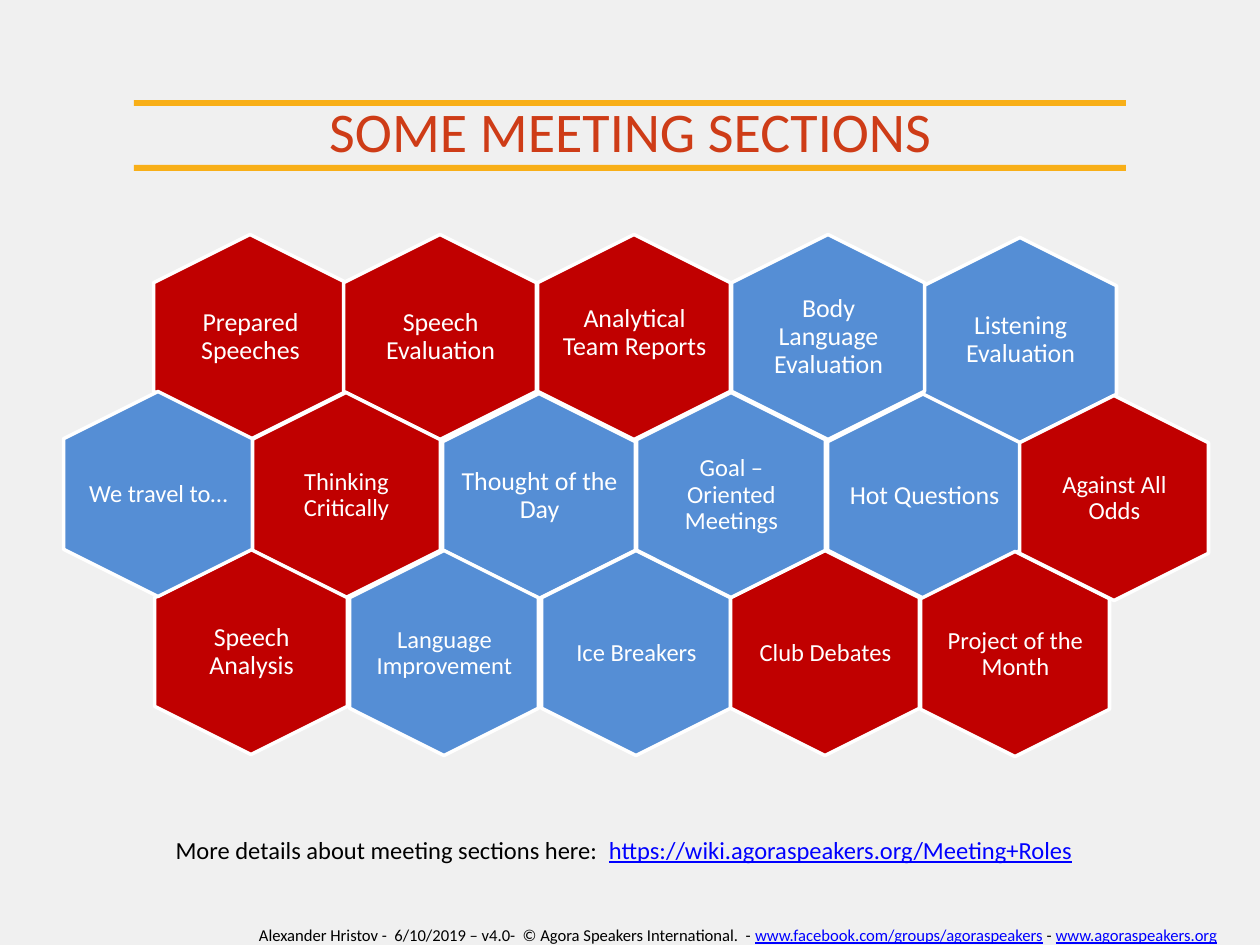
from dataclasses import dataclass

from pptx import Presentation
from pptx.dml.color import RGBColor
from pptx.enum.shapes import MSO_SHAPE
from pptx.enum.text import MSO_ANCHOR, PP_ALIGN
from pptx.util import Pt

RECTANGLE = MSO_SHAPE.RECTANGLE
HEXAGON = MSO_SHAPE.HEXAGON
TOP = MSO_ANCHOR.TOP
MIDDLE = MSO_ANCHOR.MIDDLE
CENTER = PP_ALIGN.CENTER

EMU_PER_PX = 914400 / 126
SLIDE_WIDTH, SLIDE_HEIGHT = 1260, 945
FONT_NAME = "Calibri"
COLORS = {
    "background": "F0F0F0",
    "bar": "F8AF18",
    "title": "CE3C17",
    "red": "C00000",
    "blue": "558ED5",
    "white": "FFFFFF",
    "black": "000000",
    "link": "0000FF",
}
HEXAGON_LENGTH = 205
LABEL_HEIGHT = 141


@dataclass(frozen=True)
class Run:
    text: str
    color: str = "black"
    underline: bool = False


@dataclass(frozen=True)
class TextBlock:
    left: int
    top: int
    width: int
    height: int
    size: float
    runs: tuple[Run, ...]
    anchor: MSO_ANCHOR = TOP
    inset: tuple[int, int] = (13, 6)
    line_spacing: float = 1.0


@dataclass(frozen=True)
class HexagonSize:
    across: int
    label_width: int
    font_size: float


@dataclass(frozen=True)
class Section:
    label: str
    center_x: int
    center_y: int
    color: str
    size: HexagonSize
    label_shift: int = 0


LARGE = HexagonSize(193, 169, 14.8)
SMALL = HexagonSize(189, 165, 14)

BAR_TOPS = (100, 165)

# Sections from back to front
SECTIONS = (
    Section("Prepared Speeches", 250, 337, "red", LARGE),
    Section("Speech Evaluation", 440, 337, "red", LARGE),
    Section("Hot Questions", 924, 496, "blue", LARGE),
    Section("Analytical Team Reports", 634, 337, "red", LARGE, -4),
    Section("Listening Evaluation", 1020, 340, "blue", LARGE),
    Section("Body Language Evaluation", 828, 337, "blue", LARGE),
    Section("Thought of the Day", 539, 496, "blue", LARGE),
    Section("Thinking Critically", 346, 495, "red", SMALL),
    Section("Language Improvement", 444, 653, "blue", SMALL),
    Section("Ice Breakers", 636, 653, "blue", SMALL),
    Section("Club Debates", 825, 653, "red", SMALL),
    Section("Project of the Month", 1015, 654, "red", SMALL),
    Section("Goal – Oriented Meetings", 731, 495, "blue", SMALL),
    Section("Against All Odds", 1114, 498, "red", SMALL),
    Section("Speech Analysis", 251, 652, "red", LARGE),
    Section("We travel to…", 158, 494, "blue", SMALL),
)

TITLE = TextBlock(1, 91, 1259, 76, 32, (Run("SOME MEETING SECTIONS", "title"),))
DETAILS = TextBlock(0, 829, 1248, 43, 14, (
    Run("More details about meeting sections here:  "),
    Run("https://wiki.agoraspeakers.org/Meeting+Roles", "link", True),
))
FOOTER = TextBlock(219, 919, 1038, 26, 9.5, (
    Run("Alexander Hristov -  6/10/2019 – v4.0-  © Agora Speakers International.  - "),
    Run("www.facebook.com/groups/agoraspeakers", "link", True),
    Run(" - "),
    Run("www.agoraspeakers.org", "link", True),
))


def px(length: float) -> int:
    return round(length * EMU_PER_PX)


def rgb(name: str) -> RGBColor:
    return RGBColor.from_string(COLORS[name])


def set_attributes(target, values: dict) -> None:
    for name, value in values.items():
        setattr(target, name, value)


def add_text(shapes, block: TextBlock) -> None:
    box = shapes.add_textbox(px(block.left), px(block.top), px(block.width), px(block.height))
    side, edge = (px(inset) for inset in block.inset)
    set_attributes(box.text_frame, {
        "word_wrap": True,
        "vertical_anchor": block.anchor,
        "margin_left": side,
        "margin_right": side,
        "margin_top": edge,
        "margin_bottom": edge,
    })
    paragraph = box.text_frame.paragraphs[0]
    set_attributes(paragraph, {"alignment": CENTER, "line_spacing": block.line_spacing})
    for item in block.runs:
        run = paragraph.add_run()
        run.text = item.text
        set_attributes(run.font, {
            "name": FONT_NAME,
            "size": Pt(block.size),
            "underline": item.underline,
        })
        run.font.color.rgb = rgb(item.color)


def add_filled_shape(shapes, kind: MSO_SHAPE, left: float, top: float,
                     width: int, height: int, color: str):
    shape = shapes.add_shape(kind, px(left), px(top), px(width), px(height))
    shape.shadow.inherit = False
    shape.fill.solid()
    shape.fill.fore_color.rgb = rgb(color)
    shape.line.fill.background()
    return shape


def add_section(shapes, section: Section) -> None:
    group = shapes.add_group_shape()
    size = section.size
    hexagon = add_filled_shape(
        group.shapes, HEXAGON,
        section.center_x - HEXAGON_LENGTH / 2, section.center_y - size.across / 2,
        HEXAGON_LENGTH, size.across, section.color)
    hexagon.rotation = 90
    hexagon.line.color.rgb = rgb("white")
    hexagon.line.width = Pt(2)
    # The label stays upright in its own box
    add_text(group.shapes, TextBlock(
        section.center_x - size.label_width // 2,
        section.center_y - LABEL_HEIGHT // 2 + section.label_shift,
        size.label_width, LABEL_HEIGHT, size.font_size,
        (Run(section.label, "white"),), MIDDLE, (6, 6), 0.9))


def main() -> None:
    presentation = Presentation()
    presentation.slide_width = px(SLIDE_WIDTH)
    presentation.slide_height = px(SLIDE_HEIGHT)
    slide = presentation.slides.add_slide(presentation.slide_layouts[6])
    slide.background.fill.solid()
    slide.background.fill.fore_color.rgb = rgb("background")

    # Title between two bars
    for top in BAR_TOPS:
        add_filled_shape(slide.shapes, RECTANGLE, 134, top, 992, 6, "bar")
    add_text(slide.shapes, TITLE)

    # Honeycomb of meeting sections
    for section in SECTIONS:
        add_section(slide.shapes, section)

    # Link line and footer
    for block in (DETAILS, FOOTER):
        add_text(slide.shapes, block)

    presentation.save("out.pptx")


if __name__ == "__main__":
    main()
